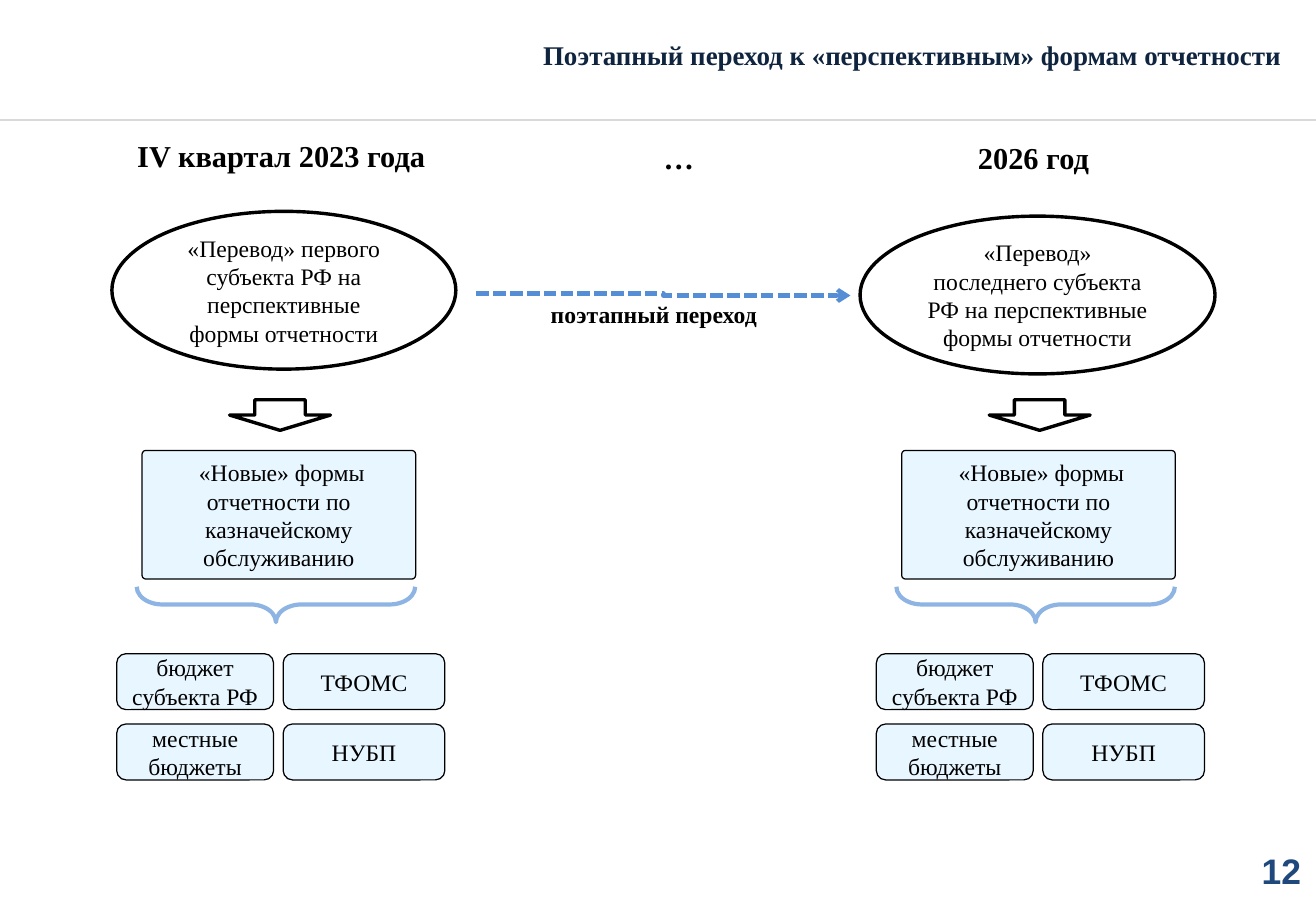
from lxml import etree
from pptx import Presentation
from pptx import util as u
from pptx.dml.color import RGBColor
from pptx.enum import dml, shapes, text
from pptx.oxml import ns

BLACK = RGBColor(0x00, 0x00, 0x00)
WHITE = RGBColor(0xFF, 0xFF, 0xFF)
NAVY = RGBColor(0x0F, 0x24, 0x3E)
NUMBER_BLUE = RGBColor(0x1F, 0x49, 0x7D)
ARROW_BLUE = RGBColor(0x55, 0x8E, 0xD5)
BRACE_BLUE = RGBColor(0x8E, 0xB4, 0xE3)
PALE_BLUE = RGBColor(0xE8, 0xF7, 0xFF)
RULE_GREY = RGBColor(0xD9, 0xD9, 0xD9)
SHAPE = shapes.MSO_SHAPE
CENTER = text.PP_ALIGN.CENTER
RIGHT = text.PP_ALIGN.RIGHT
TOP = text.MSO_ANCHOR.TOP
MIDDLE = text.MSO_ANCHOR.MIDDLE


def write(shape, content, size=14, bold=False, color=BLACK, align=CENTER,
          anchor=MIDDLE, font="Times New Roman", margins=(0.25, 0.13)):
    frame = shape.text_frame
    frame.word_wrap = True
    frame.auto_size = text.MSO_AUTO_SIZE.NONE
    frame.vertical_anchor = anchor
    frame.margin_left = frame.margin_right = u.Cm(margins[0])
    frame.margin_top = frame.margin_bottom = u.Cm(margins[1])
    paragraph = frame.paragraphs[0]
    paragraph.alignment = align
    run = paragraph.add_run()
    run.text = content
    run.font.name = font
    run.font.size = u.Pt(size)
    run.font.bold = bold
    run.font.color.rgb = color


def add_figure(kind, left, top, width, height, fill=WHITE, line=BLACK, weight=2.0):
    shape = slide.shapes.add_shape(kind, u.Cm(left), u.Cm(top), u.Cm(width), u.Cm(height))
    shape.shadow.inherit = False
    if fill is None:
        shape.fill.background()
    else:
        shape.fill.solid()
        shape.fill.fore_color.rgb = fill
    shape.line.color.rgb = line
    shape.line.width = u.Pt(weight)
    return shape


presentation = Presentation()
presentation.slide_width = u.Cm(27.51)
presentation.slide_height = u.Cm(19.05)
slide = presentation.slides.add_slide(presentation.slide_layouts[5])

title = slide.shapes.title
title.left, title.top, title.width, title.height = u.Cm(7.19), u.Cm(0.64), u.Cm(19.89), u.Cm(0.99)
write(title, "Поэтапный переход к «перспективным» формам отчетности",
      size=16, bold=True, color=NAVY, align=RIGHT, margins=(0.3, 0.15))

rule = slide.shapes.add_connector(
    shapes.MSO_CONNECTOR.STRAIGHT, 0, u.Cm(2.51), presentation.slide_width, u.Cm(2.51))
rule.line.color.rgb = RULE_GREY
rule.line.width = u.Pt(1)

transition = slide.shapes.add_connector(
    shapes.MSO_CONNECTOR.ELBOW, u.Cm(9.96), u.Cm(6.14), u.Cm(17.78), u.Cm(6.18))
transition.line.color.rgb = ARROW_BLUE
transition.line.width = u.Pt(2.5)
transition.line.dash_style = dml.MSO_LINE.SQUARE_DOT
etree.SubElement(transition.line._get_or_add_ln(), ns.qn("a:tailEnd"), type="arrow")

for connector in (rule, transition):
    etree.SubElement(connector._element.spPr, ns.qn("a:effectLst"))

labels = [
    ("IV квартал 2023 года", 2.54, 2.74, 6.68, 1.02, 18),
    ("…", 12.6, 2.79, 3.18, 1.02, 18),
    ("2026 год", 18.85, 2.79, 5.51, 1.02, 18),
    ("поэтапный переход", 9.96, 6.15, 7.42, 0.86, 14),
]
for content, left, top, width, height, size in labels:
    label = slide.shapes.add_textbox(u.Cm(left), u.Cm(top), u.Cm(width), u.Cm(height))
    write(label, content, size=size, bold=True, anchor=TOP)

stages = [
    ("«Перевод» первого субъекта РФ на перспективные формы отчетности", 2.34, 4.42, 7.19),
    ("«Перевод» последнего субъекта РФ на перспективные формы отчетности", 17.98, 4.52, 7.42),
]
budgets = [("бюджет субъекта РФ", "ТФОМС"), ("местные бюджеты", "НУБП")]
budget_columns = [(2.44, 3.28), (5.92, 3.38)]

for stage, (content, left, top, width) in enumerate(stages):
    offset = stage * 15.88
    write(add_figure(SHAPE.OVAL, left, top, width, 3.3), content)
    add_figure(SHAPE.DOWN_ARROW, 4.8 + offset, 8.36, 2.11, 0.64)

    forms = add_figure(SHAPE.ROUNDED_RECTANGLE, 2.97 + offset, 9.42, 5.72, 2.69, PALE_BLUE, weight=0.75)
    forms.adjustments[0] = 0.03
    write(forms, " «Новые» формы отчетности по казначейскому обслуживанию")

    brace = add_figure(SHAPE.LEFT_BRACE, 5.4 + offset, 9.73, 0.74, 5.82, None, BRACE_BLUE, 2.5)
    brace.adjustments[0] = 0.72
    brace.adjustments[1] = 0.5
    brace.rotation = 270

    for row, names in enumerate(budgets):
        for name, (left, width) in zip(names, budget_columns):
            budget = add_figure(SHAPE.ROUNDED_RECTANGLE, left + offset, 13.67 + row * 1.47,
                                width, 1.17, PALE_BLUE, weight=0.75)
            write(budget, name)

number = slide.shapes.add_textbox(u.Cm(20.88), u.Cm(17.75), u.Cm(6.32), u.Cm(0.89))
write(number, "12", size=21, bold=True, color=NUMBER_BLUE, align=RIGHT,
      anchor=TOP, font="Arial", margins=(0, 0))

presentation.save("out.pptx")
